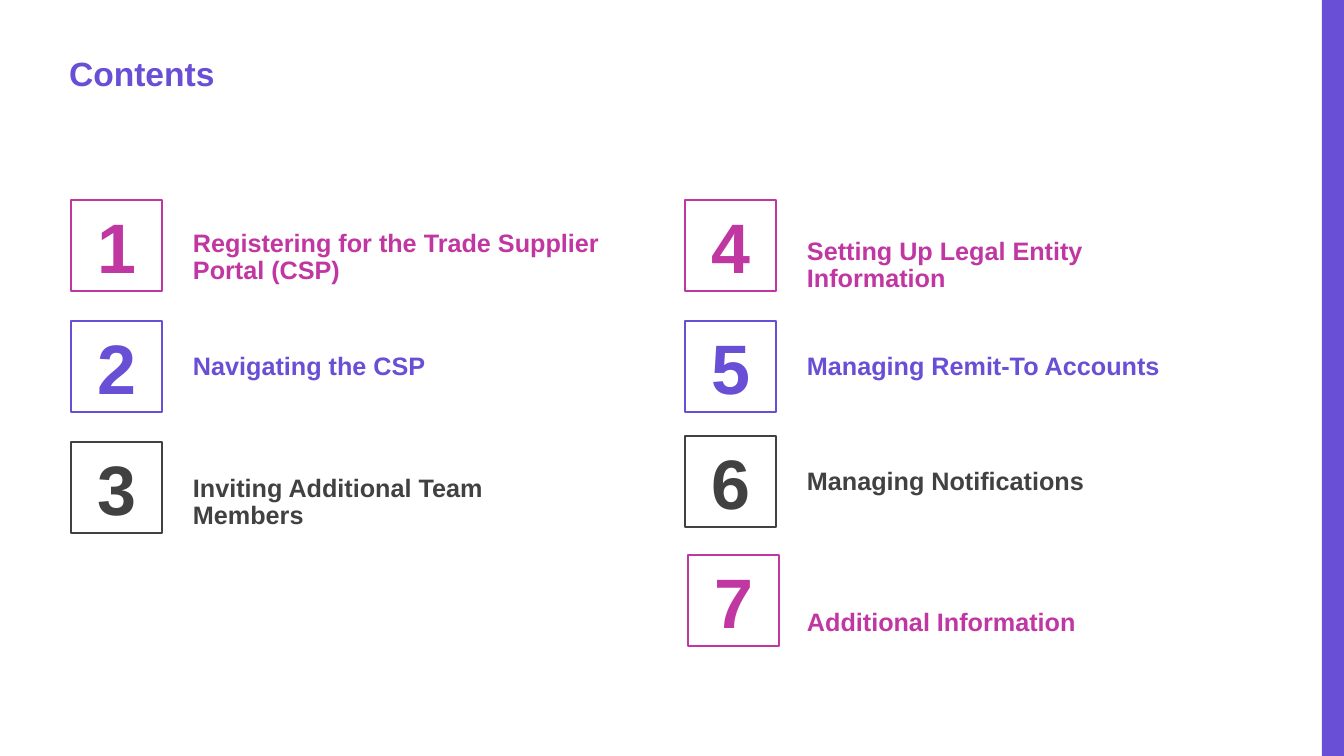
from dataclasses import dataclass

from pptx import Presentation
from pptx import util as u
from pptx.dml import color
from pptx.enum import shapes, text

SCALE = 914400 / 100.8


def px(n):
    return u.Emu(round(n * SCALE))


@dataclass(frozen=True)
class Theme:
    font: str = "Arial"
    pink: str = "C137A2"
    violet: str = "694ED6"
    gray: str = "414141"
    head: int = 24
    digit: int = 50
    label: int = 18
    edge: int = 2


def write(frame, words, font, size, tint, align=text.PP_ALIGN.LEFT,
          anchor=text.MSO_ANCHOR.TOP, pitch=1.0, inset=0):
    frame.word_wrap = True
    frame.auto_size = text.MSO_AUTO_SIZE.NONE
    frame.vertical_anchor = anchor
    frame.margin_left = frame.margin_right = px(inset)
    frame.margin_top = frame.margin_bottom = px(inset // 2)
    para = frame.paragraphs[0]
    para.alignment = align
    para.line_spacing = pitch
    para.space_before = u.Pt(0)
    run = para.add_run()
    run.text = words
    run.font.name = font
    run.font.size = u.Pt(size)
    run.font.bold = True
    run.font.color.rgb = color.RGBColor.from_string(tint)


class Page:
    def __init__(self, slide, theme):
        self.slide = slide
        self.theme = theme

    def rect(self, x, y, w, h):
        shape = self.slide.shapes.add_shape(
            shapes.MSO_SHAPE.RECTANGLE, px(x), px(y), px(w), px(h))
        shape.shadow.inherit = False
        return shape

    def bar(self, x, y, w, h):
        shape = self.rect(x, y, w, h)
        shape.fill.solid()
        shape.fill.fore_color.rgb = color.RGBColor.from_string(self.theme.violet)
        shape.line.fill.background()

    def title(self, words, x, y, w, h):
        shape = self.slide.shapes.title
        shape.left, shape.top, shape.width, shape.height = map(px, (x, y, w, h))
        write(shape.text_frame, words, self.theme.font, self.theme.head,
              self.theme.violet, anchor=text.MSO_ANCHOR.BOTTOM, pitch=0.8)

    def badge(self, digit, tint, x, y, side=91):
        shape = self.rect(x, y, side, side)
        shape.fill.background()
        shape.line.color.rgb = color.RGBColor.from_string(tint)
        shape.line.width = u.Pt(self.theme.edge)
        write(shape.text_frame, str(digit), self.theme.font, self.theme.digit,
              tint, align=text.PP_ALIGN.CENTER,
              anchor=text.MSO_ANCHOR.MIDDLE, inset=10)

    def label(self, words, tint, x, y, w, h=57):
        box = self.slide.shapes.add_textbox(px(x), px(y), px(w), px(h))
        write(box.text_frame, words, self.theme.font, self.theme.label, tint,
              pitch=0.9)


def main():
    deck = Presentation()
    deck.slide_width, deck.slide_height = px(1344), px(756)
    theme = Theme()
    page = Page(deck.slides.add_slide(deck.slide_layouts[5]), theme)
    page.bar(1322, 0, 22, 756)
    page.title("Contents", 69, 19, 1068, 74)

    tints = (theme.pink, theme.violet, theme.gray)
    left, right = 193, 807
    items = (
        ("Registering for the Trade Supplier Portal (CSP)", 71, 200, left, 231, 450),
        ("Navigating the CSP", 71, 321, left, 354, 403),
        ("Inviting Additional Team Members", 71, 442, left, 476, 403),
        ("Setting Up Legal Entity Information", 685, 200, right, 239, 403),
        ("Managing Remit-To Accounts", 685, 321, right, 354, 403),
        ("Managing Notifications", 685, 436, right, 469, 403),
        ("Additional Information", 688, 555, right, 610, 450),
    )
    for i, (words, x, y, start, top, wide) in enumerate(items):
        tint = tints[i % len(tints)]
        page.badge(i + 1, tint, x, y)
        page.label(words, tint, start, top, wide)

    deck.save("out.pptx")


if __name__ == "__main__":
    main()
